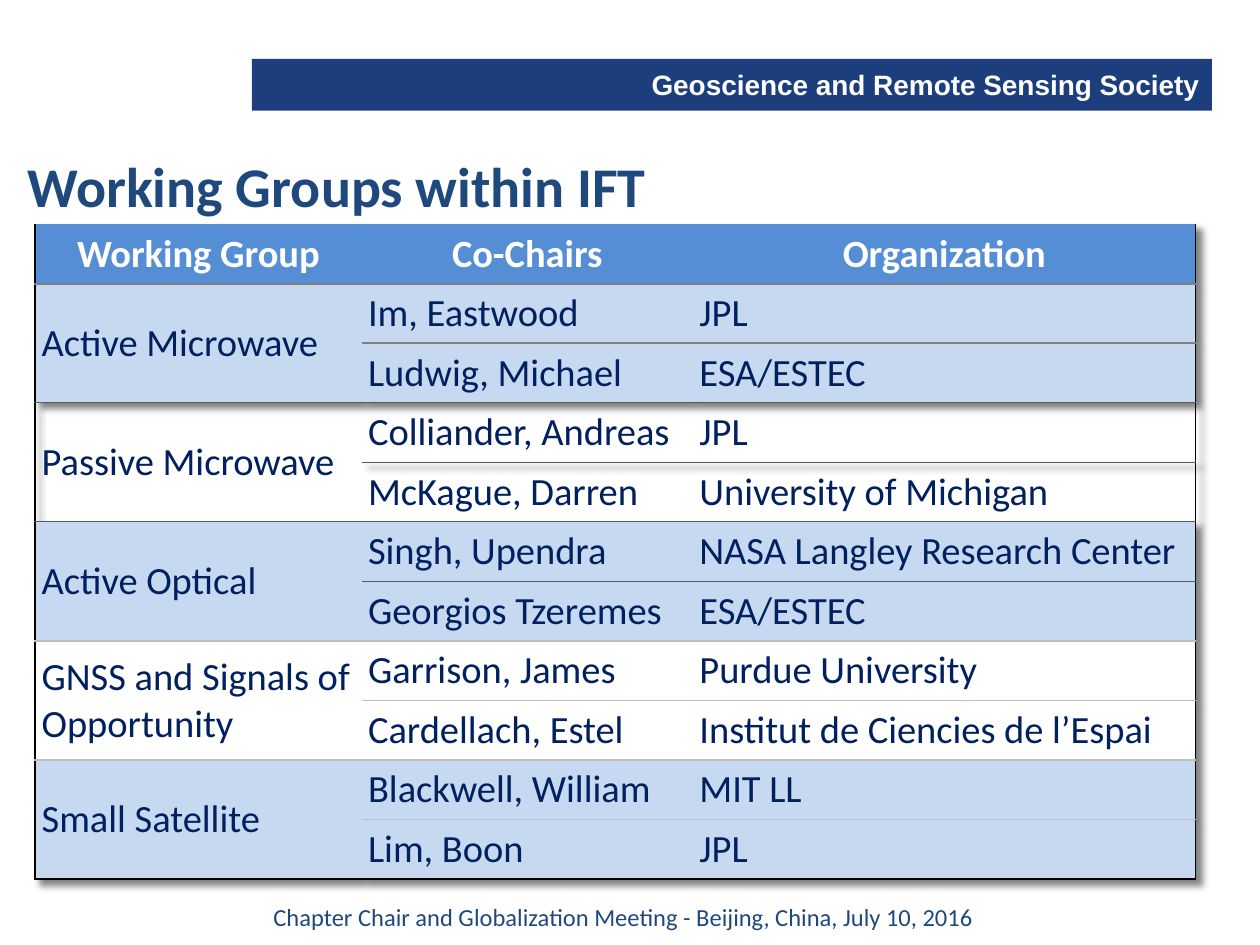
from lxml import etree
from pptx import Presentation
from pptx import util as u
from pptx.dml.color import RGBColor
from pptx.enum import shapes, text
from pptx.oxml import parse_xml
from pptx.oxml.ns import nsdecls, qn

NO_GRID_STYLE = "{2D5ABB26-0587-4C30-8999-92F81FD0307C}"
WHITE, NAVY, TITLE_BLUE = "FFFFFF", "002060", "1F497D"
BANNER_BLUE, HEADER_BLUE, BAND_BLUE = "1C3E7D", "558ED5", "C6D9F1"
OUTLINE = ("000000", 1)
HEADER_RULE, DARK_RULE, LIGHT_RULE = ("808080", 1.5), ("595959", 0.5), ("BFBFBF", 1)
LEFT, CENTER, RIGHT = text.PP_ALIGN.LEFT, text.PP_ALIGN.CENTER, text.PP_ALIGN.RIGHT

HEADINGS = ["Working Group", "Co-Chairs", "Organization"]
# Name, (co-chair, organization) pairs, fill, rule below
GROUPS = [
    ("Active Microwave",
     [("Im, Eastwood", "JPL"), ("Ludwig, Michael", "ESA/ESTEC")], BAND_BLUE, DARK_RULE),
    ("Passive Microwave",
     [("Colliander, Andreas", "JPL"), ("McKague, Darren", "University of Michigan")],
     None, DARK_RULE),
    ("Active Optical",
     [("Singh, Upendra", "NASA Langley Research Center"), ("Georgios Tzeremes", "ESA/ESTEC")],
     BAND_BLUE, LIGHT_RULE),
    ("GNSS and Signals of Opportunity",
     [("Garrison, James", "Purdue University"),
      ("Cardellach, Estel", "Institut de Ciencies de l’Espai")], WHITE, LIGHT_RULE),
    ("Small Satellite",
     [("Blackwell, William", "MIT LL"), ("Lim, Boon", "JPL")], BAND_BLUE, OUTLINE),
]


def color(value):
    return RGBColor.from_string(value)


class SlideBuilder:
    def __init__(self, page, font="Calibri"):
        self.page = page
        self.font = font

    def add_words(self, frame, words, size, ink, bold=False, align=LEFT, font=None):
        para = frame.paragraphs[0]
        para.alignment = align
        span = para.add_run()
        span.text = words
        span.font.name = font or self.font
        span.font.size = u.Pt(size)
        span.font.bold = bold
        span.font.color.rgb = color(ink)

    def banner(self, words, *area):
        box = self.page.shapes.add_shape(
            shapes.MSO_SHAPE.RECTANGLE, *(u.Cm(length) for length in area))
        box.shadow.inherit = False
        box.fill.solid()
        box.fill.fore_color.rgb = color(BANNER_BLUE)
        box.line.fill.background()
        box.text_frame.word_wrap = False
        box.text_frame.vertical_anchor = text.MSO_ANCHOR.MIDDLE
        self.add_words(box.text_frame, words, 16, WHITE, True, RIGHT, "Arial")

    def title(self, words, *area):
        box = self.page.shapes.title
        box.left, box.top, box.width, box.height = (u.Cm(length) for length in area)
        box.text_frame.vertical_anchor = text.MSO_ANCHOR.TOP
        box.text_frame.auto_size = text.MSO_AUTO_SIZE.SHAPE_TO_FIT_TEXT
        self.add_words(box.text_frame, words, 32, TITLE_BLUE, True)

    def caption(self, words, *area):
        box = self.page.shapes.add_textbox(*(u.Cm(length) for length in area))
        box.text_frame.word_wrap = False
        box.text_frame.auto_size = text.MSO_AUTO_SIZE.SHAPE_TO_FIT_TEXT
        self.add_words(box.text_frame, words, 14, TITLE_BLUE, align=CENTER)

    def table(self, left, top, widths, row_height, row_count):
        frame = self.page.shapes.add_table(
            row_count, len(widths), u.Cm(left), u.Cm(top),
            u.Cm(sum(widths)), u.Cm(row_height * row_count))
        grid = frame.table
        grid.horz_banding = False
        for column, width in zip(grid.columns, widths):
            column.width = u.Cm(width)
        for row in grid.rows:
            row.height = u.Cm(row_height)
        # Plain style with a soft shadow
        properties = grid._tbl.tblPr
        properties.find(qn("a:tableStyleId")).text = NO_GRID_STYLE
        properties.insert(0, parse_xml(
            f'<a:effectLst {nsdecls("a")}><a:outerShdw blurRad="50800" dist="50800" '
            'dir="2700000" algn="tl" rotWithShape="0"><a:srgbClr val="000000">'
            '<a:alpha val="50000"/></a:srgbClr></a:outerShdw></a:effectLst>'))
        return grid

    def cell(self, cell, words, fill, edges, ink=NAVY, bold=False, align=LEFT):
        cell.margin_left = cell.margin_right = u.Cm(0.13)
        cell.margin_top = cell.margin_bottom = u.Cm(0.13)
        cell.vertical_anchor = text.MSO_ANCHOR.MIDDLE
        # Borders come before the fill in the cell properties
        properties = cell._tc.get_or_add_tcPr()
        for side in "LRTB":
            if edges.get(side):
                ink_value, points = edges[side]
                line = etree.SubElement(properties, qn(f"a:ln{side}"), w=str(u.Pt(points)))
                solid = etree.SubElement(line, qn("a:solidFill"))
                etree.SubElement(solid, qn("a:srgbClr"), val=ink_value)
        if fill:
            cell.fill.solid()
            cell.fill.fore_color.rgb = color(fill)
        else:
            cell.fill.background()
        if words:
            self.add_words(cell.text_frame, words, 22, ink, bold, align)


def main():
    deck = Presentation()
    deck.slide_width, deck.slide_height = u.Cm(25.4), u.Cm(19.05)
    page = deck.slides.add_slide(deck.slide_layouts[5])
    builder = SlideBuilder(page)

    # Banner
    builder.banner("Geoscience and Remote Sensing Society", 5.08, 1.19, 19.35, 1.04)

    # Table of working groups
    grid = builder.table(0.71, 4.52, [6.58, 6.68, 10.13], 1.2, 1 + 2 * len(GROUPS))
    sides = [{"L": OUTLINE}, {}, {"R": OUTLINE}]
    for column, heading in enumerate(HEADINGS):
        builder.cell(grid.cell(0, column), heading, HEADER_BLUE,
                     {**sides[column], "B": HEADER_RULE}, WHITE, True, CENTER)
    rule_above = HEADER_RULE
    for index, (name, chairs, fill, rule_below) in enumerate(GROUPS):
        first = 1 + 2 * index
        grid.cell(first, 0).merge(grid.cell(first + 1, 0))
        for offset, chair in enumerate(chairs):
            row_words = ("" if offset else name, *chair)
            for column, words in enumerate(row_words):
                edges = {**sides[column],
                         "T": None if offset else rule_above,
                         "B": rule_below if offset or column == 0 else None}
                builder.cell(grid.cell(first + offset, column), words, fill, edges)
        rule_above = rule_below

    # Title and caption
    builder.title("Working Groups within IFT", 0.3, 2.92, 24.79, 1.63)
    builder.caption("Chapter Chair and Globalization Meeting - Beijing, China, July 10, 2016",
                    5.18, 18.06, 14.78, 0.86)

    deck.save("out.pptx")


if __name__ == "__main__":
    main()
